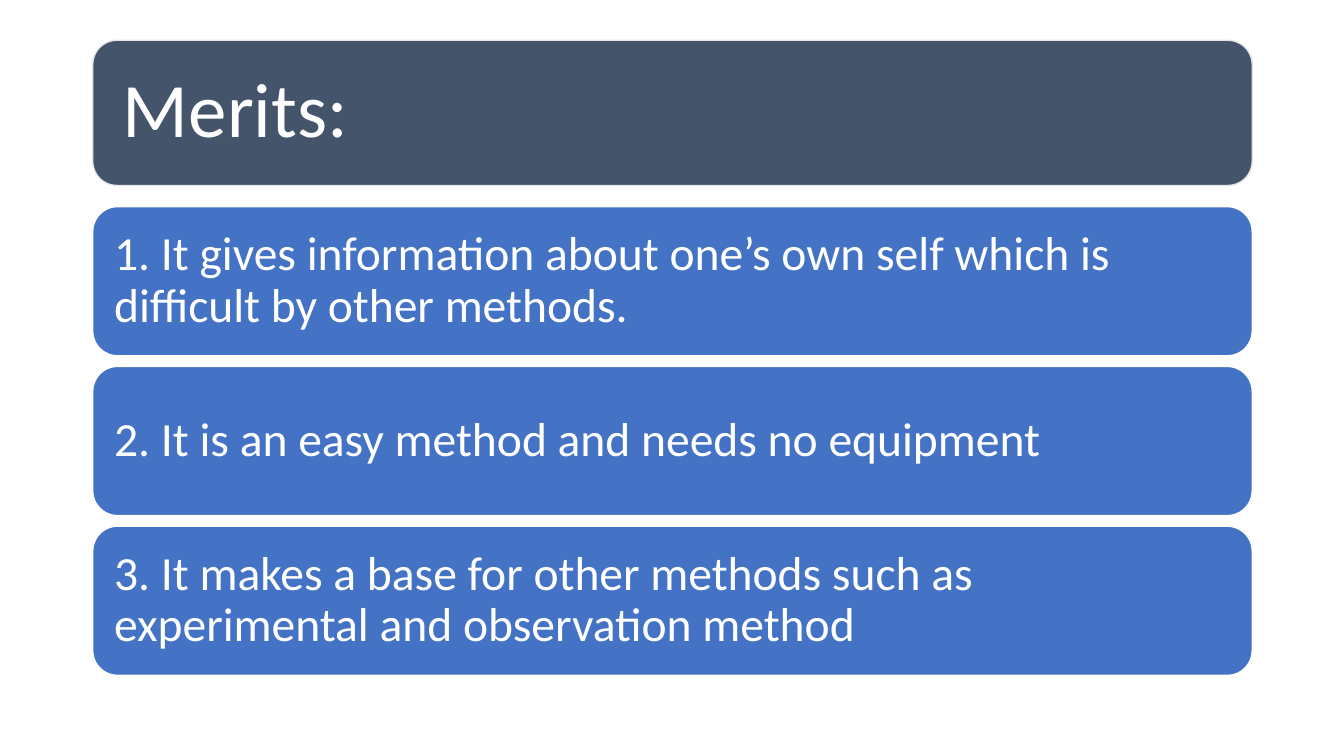
from pptx import Presentation
from pptx.dml.color import RGBColor
from pptx.enum import shapes, text
from pptx.util import Inches, Pt

SLATE = RGBColor(0x44, 0x54, 0x6A)
BLUE = RGBColor(0x44, 0x72, 0xC4)
GREY = RGBColor(0xE7, 0xE6, 0xE6)
WHITE = RGBColor(0xFF, 0xFF, 0xFF)

deck = Presentation()
deck.slide_width = Inches(13.33)
deck.slide_height = Inches(7.5)
page = deck.slides.add_slide(deck.slide_layouts[6])


def add_panel(words, *, top, height, fill, line, size, inset):
    """Add a full-width rounded panel with left-aligned text."""
    box = page.shapes.add_shape(
        shapes.MSO_SHAPE.ROUNDED_RECTANGLE,
        Inches(0.92), Inches(top), Inches(11.5), Inches(height))
    box.shadow.inherit = False
    box.fill.solid()
    box.fill.fore_color.rgb = fill
    box.line.color.rgb = line
    box.line.width = Pt(1)

    frame = box.text_frame
    frame.word_wrap = True
    frame.vertical_anchor = text.MSO_ANCHOR.MIDDLE
    frame.margin_left = frame.margin_right = Inches(inset)
    frame.margin_top = frame.margin_bottom = Inches(inset)

    para = frame.paragraphs[0]
    para.alignment = text.PP_ALIGN.LEFT
    para.line_spacing = 0.9
    span = para.add_run()
    span.text = words
    span.font.name = "Calibri"
    span.font.size = Pt(size)
    span.font.color.rgb = WHITE


# Title
add_panel("Merits:", top=0.4, height=1.44, fill=SLATE, line=GREY,
          size=55, inset=0.23)

# Merits, evenly stacked
merits = [
    "1. It gives information about one’s own self which is difficult by other methods.",
    "2. It is an easy method and needs no equipment",
    "3. It makes a base for other methods such as experimental and observation method",
]
first_top, last_top = 2.05, 5.22
pitch = (last_top - first_top) / (len(merits) - 1)
for index, merit in enumerate(merits):
    add_panel(merit, top=first_top + index * pitch, height=1.48, fill=BLUE,
              line=WHITE, size=34, inset=0.14)

deck.save("out.pptx")
